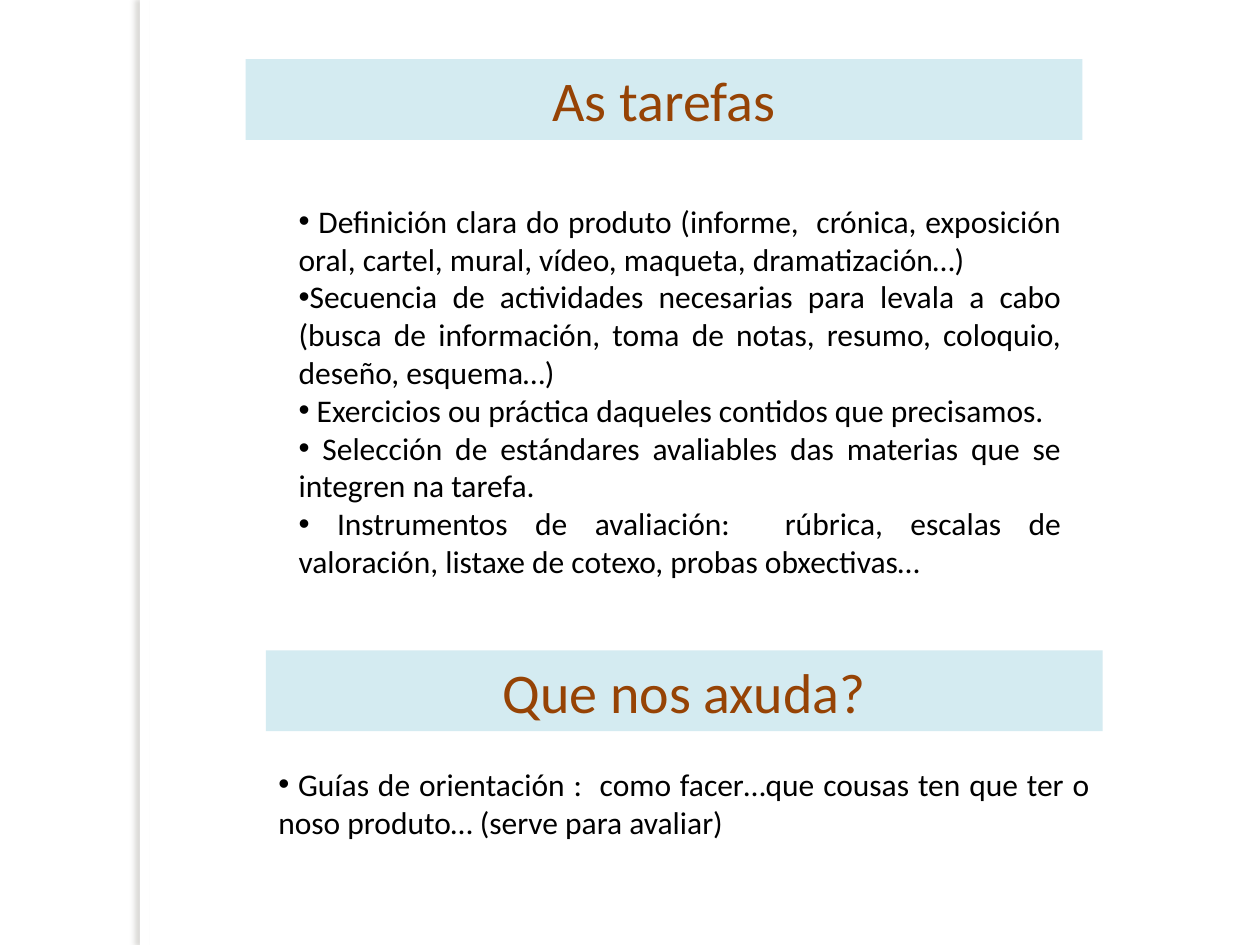
from lxml import etree
from pptx import Presentation
from pptx.dml.color import RGBColor
from pptx.enum import shapes, text
from pptx.oxml import ns
from pptx.util import Cm, Pt

HUES = {"page": "FFFFFF", "band": "D4EBF1", "head": "964305",
        "ink": "000000", "shade": "736F63"}
HEAD = {"size": Pt(32), "name": "Calibri", "bold": False}
BODY = {"size": Pt(18), "name": "Calibri", "bold": False}
FRAME = {"word_wrap": True, "auto_size": text.MSO_AUTO_SIZE.NONE,
         "margin_left": Cm(0.25), "margin_right": Cm(0.25),
         "margin_top": Cm(0.13), "margin_bottom": Cm(0.13)}
FLOW = {"space_before": Pt(0), "space_after": Pt(0), "line_spacing": 1.0}

TASKS = [
    " Definición clara do produto (informe,  crónica, exposición oral, cartel, "
    "mural, vídeo, maqueta, dramatización…)",
    "Secuencia de actividades necesarias para levala a cabo (busca de "
    "información, toma de notas, resumo, coloquio, deseño, esquema…)",
    " Exercicios ou práctica daqueles contidos que precisamos.",
    " Selección de estándares avaliables das materias que se integren na tarefa.",
    " Instrumentos de avaliación:  rúbrica, escalas de valoración, listaxe de "
    "cotexo, probas obxectivas…",
]
HELP = [" Guías de orientación :  como facer…que cousas ten que ter o noso "
        "produto… (serve para avaliar)"]


def apply(obj, vals):
    for key, val in vals.items():
        setattr(obj, key, val)


def place(shape, box):
    apply(shape, dict(zip(("left", "top", "width", "height"), map(Cm, box))))


def paint(shape, hue):
    shape.fill.solid()
    shape.fill.fore_color.rgb = RGBColor.from_string(HUES[hue])


def write(shape, lines, font, hue, align, anchor):
    frame = shape.text_frame
    frame.text = "\n".join(lines)
    apply(frame, FRAME)
    frame.vertical_anchor = anchor
    for para in frame.paragraphs:
        apply(para, FLOW)
        para.alignment = align
        run = para.runs[0]
        apply(run.font, font)
        run.font.color.rgb = RGBColor.from_string(HUES[hue])


def add_band(shape, box, words):
    """Coloured heading bar."""
    place(shape, box)
    paint(shape, "band")
    write(shape, [words], HEAD, "head", text.PP_ALIGN.CENTER,
          text.MSO_ANCHOR.MIDDLE)


def add_list(shape, box, items):
    """Justified list with bullets that run in with the text."""
    place(shape, box)
    write(shape, items, BODY, "ink", text.PP_ALIGN.JUSTIFY,
          text.MSO_ANCHOR.TOP)
    for para in shape.text_frame.paragraphs:
        props = para._p.get_or_add_pPr()
        props.set("marL", "0")
        props.set("indent", "0")
        etree.SubElement(props, ns.qn("a:buFont")).set("typeface", "Arial")
        etree.SubElement(props, ns.qn("a:buChar")).set("char", "•")


def add_rect(slide):
    rect = slide.shapes.add_shape(shapes.MSO_SHAPE.RECTANGLE, 0, 0, 0, 0)
    rect.shadow.inherit = False
    rect.line.fill.background()
    return rect


def add_strip(slide, box):
    """White side strip with a soft shadow to its left."""
    strip = add_rect(slide)
    place(strip, box)
    paint(strip, "page")
    fx = strip._element.spPr.find(ns.qn("a:effectLst"))
    shade = etree.SubElement(fx, ns.qn("a:outerShdw"), blurRad=str(Pt(3)),
                             dist=str(Pt(3)), dir="10800000", algn="tl",
                             rotWithShape="0")
    hue = etree.SubElement(shade, ns.qn("a:srgbClr"), val=HUES["shade"])
    etree.SubElement(hue, ns.qn("a:alpha"), val="25000")


def main():
    deck = Presentation()
    deck.slide_width, deck.slide_height = Cm(25.4), Cm(19.05)
    slide = deck.slides.add_slide(deck.slide_layouts[3])
    title, tasks, aid = list(slide.placeholders)[:3]

    add_strip(slide, (2.82, 0, 0.2, 19.05))
    # Tasks
    add_band(title, (4.95, 1.19, 16.87, 1.63), "As tarefas")
    add_list(tasks, (5.77, 3.94, 15.88, 7.95), TASKS)
    # Help
    add_band(add_rect(slide), (5.36, 13.11, 16.87, 1.63), "Que nos axuda?")
    add_list(aid, (5.36, 15.29, 16.87, 1.8), HELP)

    deck.save("out.pptx")


if __name__ == "__main__":
    main()
